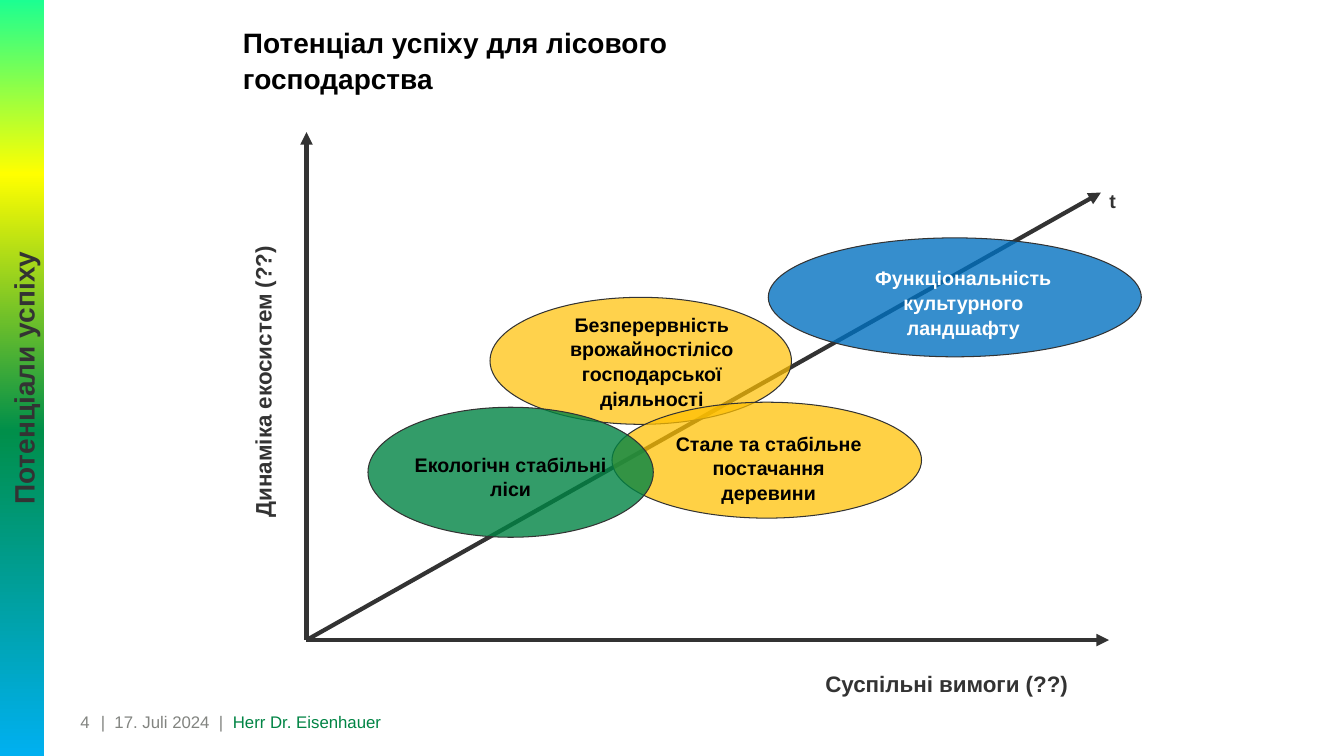
from lxml import etree
from pptx import Presentation
from pptx.dml.color import RGBColor
from pptx.enum.shapes import MSO_CONNECTOR, MSO_SHAPE
from pptx.enum.text import MSO_ANCHOR, MSO_AUTO_SIZE, PP_ALIGN
from pptx.oxml.ns import qn
from pptx.util import Inches, Pt

STRAIGHT = MSO_CONNECTOR.STRAIGHT
OVAL, RECTANGLE = MSO_SHAPE.OVAL, MSO_SHAPE.RECTANGLE
MIDDLE, BOTTOM, TOP = MSO_ANCHOR.MIDDLE, MSO_ANCHOR.BOTTOM, MSO_ANCHOR.TOP
GROW, FIXED = MSO_AUTO_SIZE.SHAPE_TO_FIT_TEXT, MSO_AUTO_SIZE.NONE
LEFT, CENTER, RIGHT = PP_ALIGN.LEFT, PP_ALIGN.CENTER, PP_ALIGN.RIGHT

BLACK = RGBColor(0x00, 0x00, 0x00)
WHITE = RGBColor(0xFF, 0xFF, 0xFF)
DARK = RGBColor(0x33, 0x33, 0x33)
GRAY = RGBColor(0x82, 0x84, 0x80)
GREEN = RGBColor(0x00, 0x84, 0x44)
AMBER = RGBColor(0xFF, 0xC0, 0x00)
BLUE = RGBColor(0x00, 0x70, 0xC0)
BAND_STOPS = [
    (0, RGBColor(0x00, 0xB0, 0xF0)),
    (43, RGBColor(0x00, 0x8F, 0x4A)),
    (77, RGBColor(0xFF, 0xFF, 0x00)),
    (100, RGBColor(0x1C, 0xFF, 0x91)),
]


class Diagram:
    font = "Arial"
    line_spacing = 1.05

    def __init__(self, slide):
        self.slide = slide

    def fill_text(self, shape, runs, size, bold=True, align=CENTER,
                  anchor=TOP, inset=True, auto_size=GROW):
        frame = shape.text_frame
        frame.word_wrap = True
        frame.auto_size = auto_size
        frame.vertical_anchor = anchor
        if not inset:
            frame.margin_left = frame.margin_right = 0
            frame.margin_top = frame.margin_bottom = 0
        paragraph = frame.paragraphs[0]
        paragraph.alignment = align
        paragraph.line_spacing = self.line_spacing
        for text, color in runs:
            run = paragraph.add_run()
            run.text = text
            run.font.name = self.font
            run.font.size = Pt(size)
            run.font.bold = bold
            run.font.color.rgb = color

    def title(self, text, box):
        title = self.slide.shapes.title
        title.left, title.top, title.width, title.height = map(Inches, box)
        self.fill_text(title, [(text, BLACK)], 20, align=LEFT, anchor=BOTTOM,
                       inset=False, auto_size=FIXED)

    def label(self, text, box, size=14, color=BLACK, rotation=0):
        label = self.slide.shapes.add_textbox(*map(Inches, box))
        label.rotation = rotation
        self.fill_text(label, [(text, color)], size)

    def footer(self, runs, box, align):
        footer = self.slide.shapes.add_textbox(*map(Inches, box))
        self.fill_text(footer, runs, 12, bold=False, align=align,
                       anchor=MIDDLE, inset=False, auto_size=FIXED)

    def arrow(self, start, end):
        arrow = self.slide.shapes.add_connector(
            STRAIGHT, *map(Inches, start + end))
        arrow.line.color.rgb = DARK
        arrow.line.width = Pt(3)
        properties = arrow._element.spPr
        line = properties.find(qn("a:ln"))
        etree.SubElement(line, qn("a:tailEnd"), type="triangle")
        etree.SubElement(properties, qn("a:effectLst"))

    def ellipse(self, box, color, opacity):
        ellipse = self.slide.shapes.add_shape(OVAL, *map(Inches, box))
        ellipse.shadow.inherit = False
        ellipse.fill.solid()
        ellipse.fill.fore_color.rgb = color
        tint = ellipse._element.spPr.find(qn("a:solidFill"))[0]
        etree.SubElement(tint, qn("a:alpha"), val=str(opacity * 1000))
        ellipse.line.color.rgb = DARK
        ellipse.line.width = Pt(0.75)

    def band(self, text, box):
        band = self.slide.shapes.add_shape(RECTANGLE, *map(Inches, box))
        band.rotation = 270
        band.shadow.inherit = False
        band.line.fill.background()
        band.fill.gradient()
        band.fill.gradient_angle = 0
        stops = band._element.spPr.find(qn("a:gradFill")).find(qn("a:gsLst"))
        for stop in list(stops):
            stops.remove(stop)
        for position, color in BAND_STOPS:
            stop = etree.SubElement(stops, qn("a:gs"), pos=str(position * 1000))
            etree.SubElement(stop, qn("a:srgbClr"), val=str(color))
        self.fill_text(band, [(text, DARK)], 20)


def main():
    deck = Presentation()
    deck.slide_width, deck.slide_height = Inches(13.33), Inches(7.5)
    diagram = Diagram(deck.slides.add_slide(deck.slide_layouts[5]))

    # Time arrow and the two harvest ellipses
    origin = (3.04, 6.35)
    diagram.arrow(origin, (10.92, 1.91))
    diagram.ellipse((4.86, 2.95, 2.99, 1.26), AMBER, 70)
    diagram.ellipse((6.07, 3.99, 3.07, 1.15), AMBER, 73)

    # Footer and title
    diagram.footer([("|  17. Juli 2024  |  ", GRAY),
                    ("Herr Dr. Eisenhauer", GREEN)],
                   (1, 6.81, 6.62, 0.69), LEFT)
    diagram.footer([("4", GRAY)], (0, 6.81, 0.89, 0.69), RIGHT)
    diagram.title("Потенціал успіху для лісового господарства",
                  (2.41, 0.31, 4.88, 0.63))

    # Axes and their labels
    diagram.arrow(origin, (11, 6.35))
    diagram.arrow(origin, (3.04, 1.31))
    diagram.label("t", (10.64, 1.81, 0.79, 0.33), color=DARK)
    diagram.label("Динаміка екосистем (??)", (1.06, 3.6, 3.07, 0.37),
                  16, DARK, 270)
    diagram.label("Суспільні вимоги (??)", (7.3, 6.59, 4.18, 0.37), 16, DARK)

    # Success potentials
    diagram.label("Стале та стабільне постачання деревини",
                  (6.56, 4.22, 2.13, 0.81))
    diagram.label("Безперервність врожайностілісогосподарської діяльності",
                  (5.52, 3.04, 1.89, 1.04))
    diagram.ellipse((3.65, 4.04, 2.83, 1.29), GREEN, 80)
    diagram.label("Екологічн стабільні ліси", (4, 4.43, 2.13, 0.81))
    diagram.ellipse((7.62, 2.36, 3.7, 1.18), BLUE, 79)
    diagram.label("Функціональність культурного ландшафту",
                  (8.57, 2.58, 1.97, 0.81), color=WHITE)

    # Side band
    diagram.band("Потенціали успіху", (-3.53, 3.53, 7.5, 0.44))

    deck.save("out.pptx")


if __name__ == "__main__":
    main()
